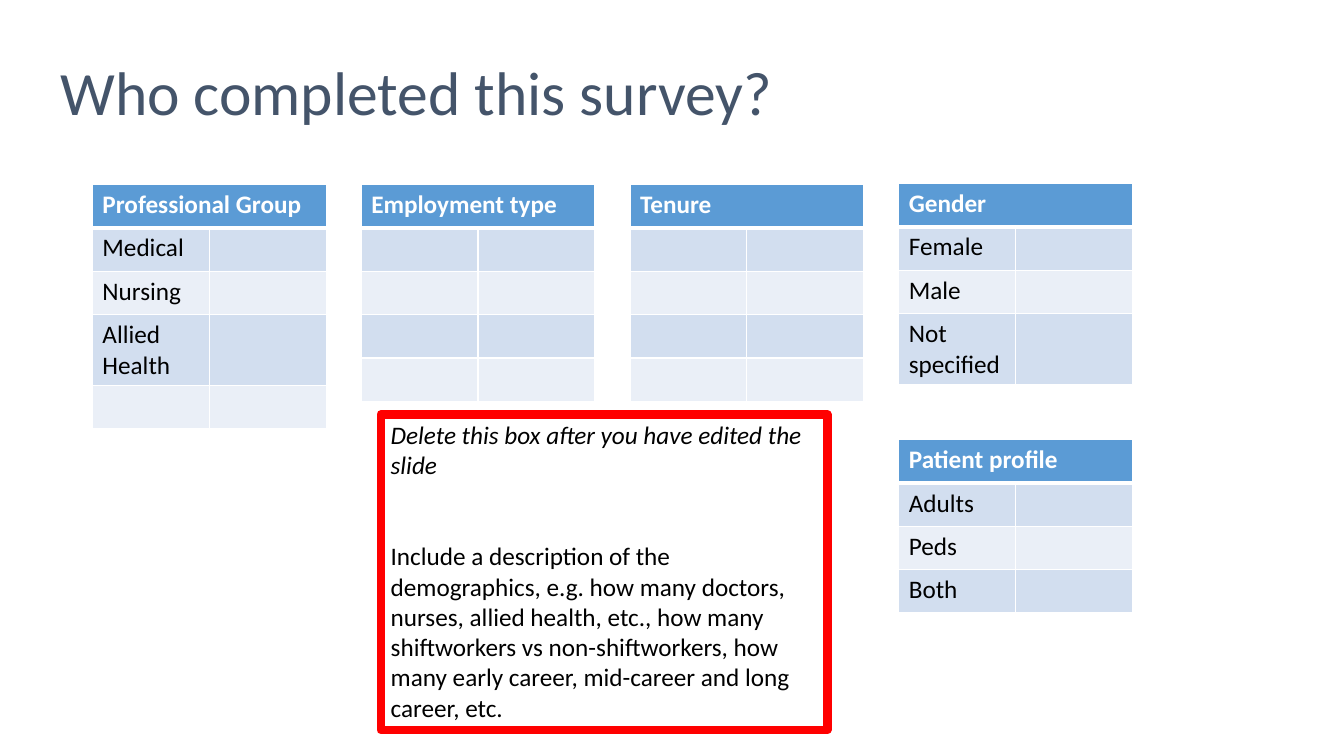
from lxml import etree
from pptx import Presentation
from pptx.dml.color import RGBColor
from pptx.enum.shapes import MSO_SHAPE
from pptx.enum.text import MSO_ANCHOR, PP_ALIGN
from pptx.oxml.ns import qn
from pptx.util import Pt

RECTANGLE = MSO_SHAPE.RECTANGLE
TOP, MIDDLE = MSO_ANCHOR.TOP, MSO_ANCHOR.MIDDLE
LEFT = PP_ALIGN.LEFT

WHITE = RGBColor(0xFF, 0xFF, 0xFF)
BLACK = RGBColor(0x00, 0x00, 0x00)
RED = RGBColor(0xFF, 0x00, 0x00)
SLATE = RGBColor(0x44, 0x54, 0x6A)
HEADER_BLUE = RGBColor(0x5B, 0x9B, 0xD5)
BANDS = (RGBColor(0xD2, 0xDE, 0xEF), RGBColor(0xEA, 0xEF, 0xF7))

COLUMN_WIDTH, ROW_HEIGHT = 83.5, 31
FIRST_LEFT, TABLE_PITCH = 66, 192
TABLE_TOP = 131.8

# Slot across the slide, top, heading, row labels
SURVEY_GROUPS = [
    (0, TABLE_TOP, "Professional Group", ["Medical", "Nursing", "Allied Health", ""]),
    (1, TABLE_TOP, "Employment type", [""] * 4),
    (2, TABLE_TOP, "Tenure", [""] * 4),
    (3, 131, "Gender", ["Female", "Male", "Not specified"]),
    (3, 314, "Patient profile", ["Adults", "Peds", "Both"]),
]


class SurveySlide:
    font_name = "Calibri"
    body_size = 18

    def __init__(self, slide):
        self.shapes = slide.shapes

    def add_text(self, paragraph, text, color, **formats):
        paragraph.alignment = LEFT
        run = paragraph.add_run()
        run.text = text
        run.font.color.rgb = color
        values = {"name": self.font_name, "size": Pt(self.body_size), **formats}
        for attribute, value in values.items():
            setattr(run.font, attribute, value)

    def title(self, text, left, top, width, height):
        box = self.shapes.add_textbox(Pt(left), Pt(top), Pt(width), Pt(height))
        frame = box.text_frame
        frame.word_wrap = True
        frame.vertical_anchor = MIDDLE
        frame.paragraphs[0].line_spacing = 0.9
        self.add_text(frame.paragraphs[0], text, SLATE, size=Pt(44))

    def instruction_box(self, reminder, guidance, left, top, width, height):
        box = self.shapes.add_shape(RECTANGLE, Pt(left), Pt(top), Pt(width), Pt(height))
        box.shadow.inherit = False
        box.fill.solid()
        box.fill.fore_color.rgb = WHITE
        box.line.color.rgb = RED
        box.line.width = Pt(6)
        outline = box._element.spPr.find(qn("a:ln"))
        etree.SubElement(outline, qn("a:round"))
        frame = box.text_frame
        frame.word_wrap = True
        frame.vertical_anchor = TOP
        self.add_text(frame.paragraphs[0], reminder, BLACK, italic=True)
        guidance_paragraph = frame.add_paragraph()
        guidance_paragraph.space_before = Pt(43.5)
        self.add_text(guidance_paragraph, guidance, BLACK)

    def cell(self, cell, text, fill, text_color, bold, top_border, bottom_border):
        properties = cell._tc.get_or_add_tcPr()
        borders = {"a:lnL": 1, "a:lnR": 1, "a:lnT": top_border, "a:lnB": bottom_border}
        for side, width in borders.items():
            line = etree.SubElement(properties, qn(side), w=str(Pt(width)))
            solid = etree.SubElement(line, qn("a:solidFill"))
            etree.SubElement(solid, qn("a:srgbClr"), val=str(WHITE))
        cell.fill.solid()
        cell.fill.fore_color.rgb = fill
        paragraph = cell.text_frame.paragraphs[0]
        paragraph.font.size = Pt(self.body_size)
        if text:
            self.add_text(paragraph, text, text_color, bold=bold)

    def group_table(self, heading, labels, left, top):
        row_count = len(labels) + 1
        table = self.shapes.add_table(
            row_count, 2, Pt(left), Pt(top),
            Pt(2 * COLUMN_WIDTH), Pt(row_count * ROW_HEIGHT)).table
        table.cell(0, 0).merge(table.cell(0, 1))
        for column, text in enumerate((heading, "")):
            self.cell(table.cell(0, column), text, HEADER_BLUE, WHITE, True, 1, 3)
        for row, label in enumerate(labels, start=1):
            top_border = 3 if row == 1 else 1
            for column, text in enumerate((label, "")):
                self.cell(table.cell(row, column), text, BANDS[(row - 1) % 2],
                          BLACK, False, top_border, 1)


def main():
    presentation = Presentation()
    presentation.slide_width, presentation.slide_height = Pt(960), Pt(540)
    slide = SurveySlide(presentation.slides.add_slide(presentation.slide_layouts[6]))
    slide.title("Who completed this survey?", 36, 29.5, 828, 77)
    slide.instruction_box(
        "Delete this box after you have edited the slide",
        "Include a description of the demographics, e.g. how many doctors, nurses, "
        "allied health, etc., how many shiftworkers vs non-shiftworkers, how many "
        "early career, mid-career and long career, etc.",
        272, 296, 319, 225.5)
    for slot, top, heading, labels in SURVEY_GROUPS:
        slide.group_table(heading, labels, FIRST_LEFT + slot * TABLE_PITCH, top)
    presentation.save("out.pptx")


if __name__ == "__main__":
    main()
